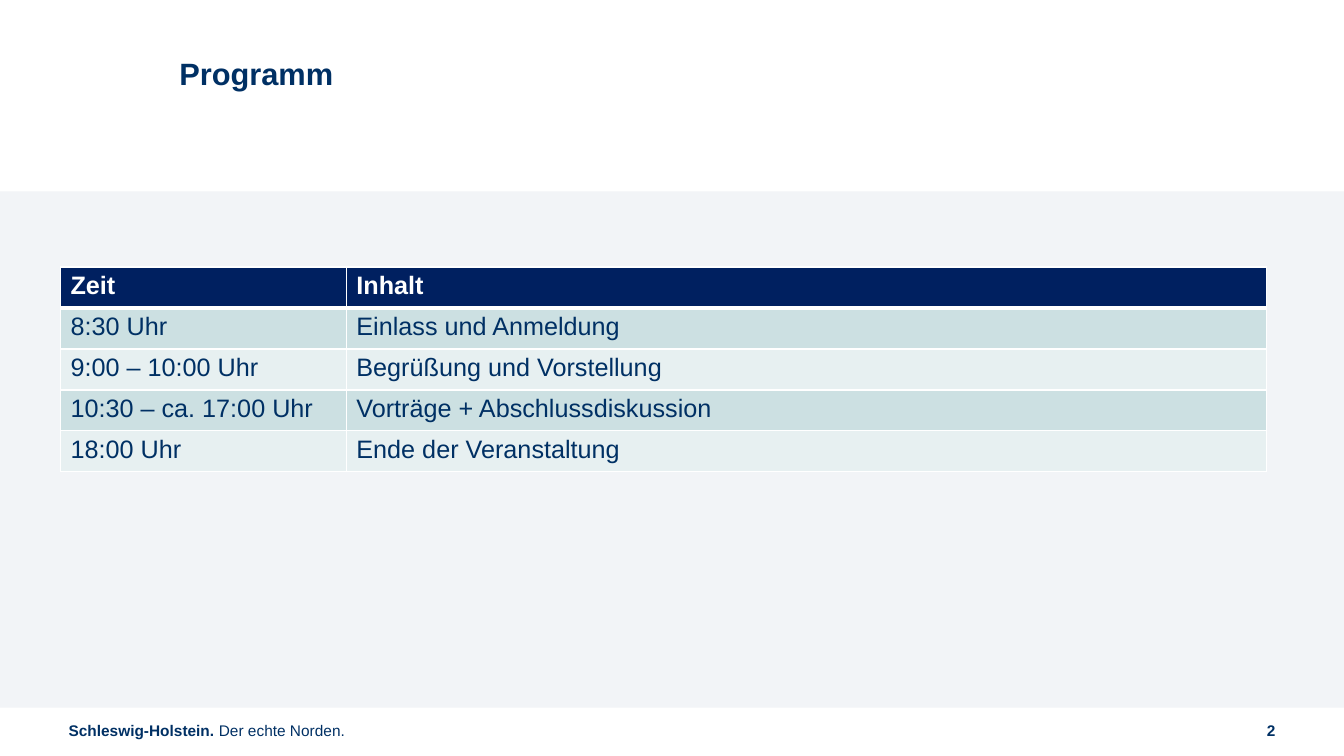
from lxml.etree import SubElement as Sub
from pptx import Presentation
from pptx.dml.color import RGBColor as RGB
from pptx.enum.shapes import MSO_SHAPE as Shape
from pptx.enum.text import MSO_ANCHOR as Anchor, MSO_AUTO_SIZE as Auto, PP_ALIGN as Align
from pptx.oxml.ns import qn
from pptx.util import Inches, Pt

NAVY = RGB(0x00, 0x30, 0x64)
HEAD = RGB(0x00, 0x20, 0x60)
WHITE = RGB(0xFF, 0xFF, 0xFF)
GREY = RGB(0xF2, 0xF4, 0xF7)
TEAL = RGB(0xCC, 0xE0, 0xE2)
PALE = RGB(0xE7, 0xF0, 0xF1)

ROWS = [
    ("Zeit", "Inhalt"),
    ("8:30 Uhr", "Einlass und Anmeldung"),
    ("9:00 – 10:00 Uhr", "Begrüßung und Vorstellung"),
    ("10:30 – ca. 17:00 Uhr", "Vorträge + Abschlussdiskussion"),
    ("18:00 Uhr", "Ende der Veranstaltung"),
]


class Page:
    """Holds the style and the slide; lengths are percent of its size."""

    face = "Arial"

    def __init__(self, deck):
        self.wide, self.high = deck.slide_width, deck.slide_height
        self.slide = deck.slides.add_slide(deck.slide_layouts[5])
        self.items = self.slide.shapes

    def across(self, share):
        return round(self.wide * share / 100)

    def down(self, share):
        return round(self.high * share / 100)

    def area(self, x, y, w, h):
        return self.across(x), self.down(y), self.across(w), self.down(h)

    def words(self, par, text, size, bold=False, color=NAVY):
        run = par.add_run()
        run.text = text
        font = run.font
        font.name, font.size, font.bold = self.face, Pt(size), bold
        font.color.rgb = color

    def frame(self, item, anchor, wrap):
        box = item.text_frame
        box.margin_left = box.margin_right = box.margin_top = box.margin_bottom = 0
        box.vertical_anchor, box.word_wrap, box.auto_size = anchor, wrap, Auto.NONE
        return box.paragraphs[0]

    def title(self, text, *place):
        item = self.items.title
        item.left, item.top, item.width, item.height = self.area(*place)
        par = self.frame(item, Anchor.TOP, True)
        par.alignment = Align.LEFT
        self.words(par, text, 22, True)

    def band(self, color, *place):
        item = self.items.add_shape(Shape.RECTANGLE, *self.area(*place))
        item.shadow.inherit = False
        item.fill.solid()
        item.fill.fore_color.rgb = color
        item.line.fill.background()

    def label(self, runs, align, *place):
        par = self.frame(self.items.add_textbox(*self.area(*place)), Anchor.MIDDLE, False)
        par.alignment = align
        for text, bold in runs:
            self.words(par, text, 11, bold)

    def edges(self, cell, top, bottom):
        props = cell._tc.get_or_add_tcPr()
        for side, width in (("L", 1), ("R", 1), ("T", top), ("B", bottom)):
            line = Sub(props, qn(f"a:ln{side}"), w=str(Pt(width)))
            Sub(Sub(line, qn("a:solidFill")), qn("a:srgbClr"), val=str(WHITE))

    def table(self, rows, x, y, cols, step):
        place = self.area(x, y, sum(cols), step * len(rows))
        grid = self.items.add_table(len(rows), len(cols), *place).table
        for col, share in zip(grid.columns, cols):
            col.width = self.across(share)
        for r, texts in enumerate(rows):
            grid.rows[r].height = self.down(step)
            head = r == 0
            fill = HEAD if head else (PALE, TEAL)[r % 2]
            for c, text in enumerate(texts):
                cell = grid.cell(r, c)
                self.edges(cell, 3 if r == 1 else 1, 3 if head else 1)
                cell.fill.solid()
                cell.fill.fore_color.rgb = fill
                par = cell.text_frame.paragraphs[0]
                self.words(par, text, 18, head, WHITE if head else NAVY)


def main():
    deck = Presentation()
    deck.slide_width, deck.slide_height = Inches(13.33), Inches(7.5)
    page = Page(deck)

    # Background band and title
    page.band(GREY, 0, 25.33, 100, 68.27)
    page.title("Programm", 13.35, 7.2, 65.57, 10.8)

    # Schedule
    page.table(ROWS, 4.5, 35.33, (21.27, 68.49), 5.42)

    # Footer
    motto = [("Schleswig-Holstein.", True), (" Der echte Norden.", False)]
    page.label(motto, Align.LEFT, 5.1, 94.67, 32.26, 3.87)
    page.label([("2", True)], Align.RIGHT, 87.02, 94.67, 7.88, 3.87)

    deck.save("out.pptx")


if __name__ == "__main__":
    main()
